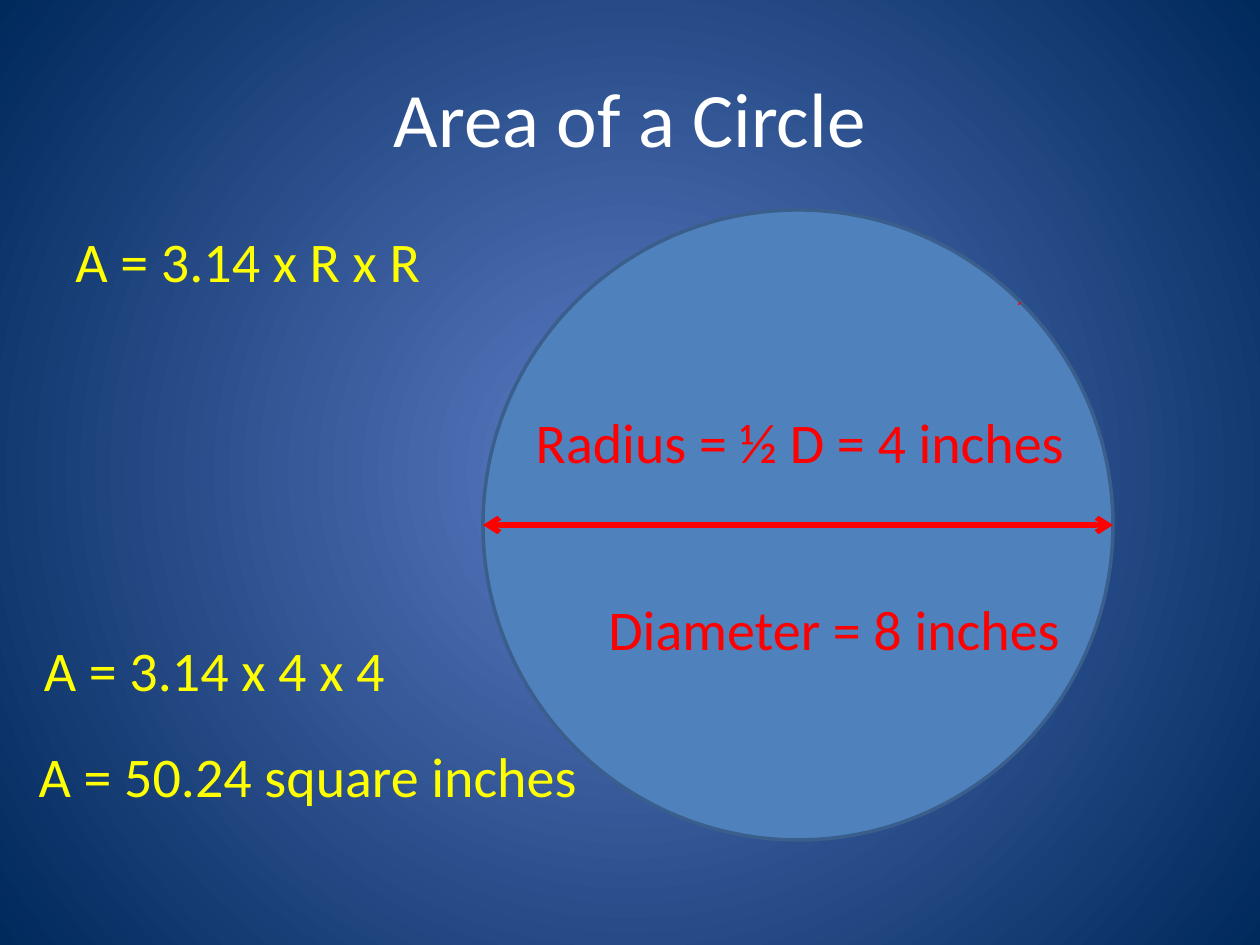
import math

from lxml import etree
from pptx import Presentation
from pptx.dml.color import RGBColor
from pptx.enum import shapes, text
from pptx.oxml import ns
from pptx.util import Pt

WHITE = RGBColor(0xFF, 0xFF, 0xFF)
YELLOW = RGBColor(0xFF, 0xFF, 0x00)
RED = RGBColor(0xFF, 0x00, 0x00)
CIRCLE_FILL = RGBColor(0x4F, 0x81, 0xBD)
CIRCLE_LINE = RGBColor(0x3A, 0x5F, 0x8C)
GLOW = RGBColor(0x5E, 0x7C, 0xC5)
NAVY = RGBColor(0x00, 0x29, 0x5C)


def paint_background(slide):
    """Radial gradient, light in the centre and dark at the corners."""
    fill = slide.background.fill
    fill.gradient()
    for stop, position, color in zip(fill.gradient_stops, (0, 1), (GLOW, NAVY)):
        stop.position = position
        stop.color.rgb = color
    gradient = slide.background._cSld.find(".//" + ns.qn("a:gradFill"))
    gradient.remove(gradient.find(ns.qn("a:lin")))
    shade = etree.SubElement(gradient, ns.qn("a:path"), {"path": "circle"})
    etree.SubElement(shade, ns.qn("a:fillToRect"),
                     dict.fromkeys("ltrb", "50000"))


def add_text(slide, box, wording, color, size=32, wrap=False, align=None,
             anchor=text.MSO_ANCHOR.TOP):
    shape = slide.shapes.add_textbox(*map(Pt, box))
    frame = shape.text_frame
    grow = text.MSO_AUTO_SIZE.NONE if wrap else text.MSO_AUTO_SIZE.SHAPE_TO_FIT_TEXT
    frame_format = {"word_wrap": wrap, "auto_size": grow, "vertical_anchor": anchor}
    for name, value in frame_format.items():
        setattr(frame, name, value)
    paragraph = frame.paragraphs[0]
    paragraph.alignment = align
    run = paragraph.add_run()
    run.text = wording
    for name, value in {"name": "Calibri", "size": Pt(size)}.items():
        setattr(run.font, name, value)
    run.font.color.rgb = color


def add_line(slide, start, end, width, arrow=False):
    line = slide.shapes.add_connector(
        shapes.MSO_CONNECTOR.STRAIGHT, *map(Pt, (*start, *end)))
    line.line.color.rgb = RED
    line.line.width = Pt(width)
    properties = line._element.spPr
    if arrow:
        etree.SubElement(properties.find(ns.qn("a:ln")), ns.qn("a:tailEnd"),
                         {"type": "arrow"})
    etree.SubElement(properties, ns.qn("a:effectLst"))


def add_title(slide, box):
    add_text(slide, box, "Area of a Circle", WHITE, size=44, wrap=True,
             align=text.PP_ALIGN.CENTER, anchor=text.MSO_ANCHOR.MIDDLE)


def add_formula(slide, box):
    add_text(slide, box, "A = 3.14 x R x R", YELLOW, wrap=True)


def add_circle_diagram(slide, left, top, diameter):
    radius = diameter / 2
    center_x, center_y = left + radius, top + radius

    circle = slide.shapes.add_shape(
        shapes.MSO_SHAPE.OVAL, *map(Pt, (left, top, diameter, diameter)))
    circle.shadow.inherit = False
    circle.fill.solid()
    circle.fill.fore_color.rgb = CIRCLE_FILL
    circle.line.color.rgb = CIRCLE_LINE
    circle.line.width = Pt(2)

    # Short tick on the rim, at 45 degrees
    offset = radius * math.sqrt(0.5)
    rim_x, rim_y = center_x + offset, center_y - offset
    add_line(slide, (rim_x, rim_y), (rim_x - 1.44, rim_y + 1.44), 0.75)

    # Two radii that form the diameter
    for rim in (left + diameter, left):
        add_line(slide, (center_x, center_y), (rim, center_y), 3, arrow=True)

    # Measurements above and below the diameter
    add_text(slide, (left + 23, top + 109.5, 317.5, 46),
             "Radius = ½ D = 4 inches", RED)
    add_text(slide, (left + 64.5, top + 216, 275, 46),
             "Diameter = 8 inches", RED)


def add_solution(slide, left, top):
    add_text(slide, (left + 3, top, 214, 46), "A = 3.14 x 4 x 4", YELLOW)
    add_text(slide, (left, top + 60.5, 325.5, 46), "A = 50.24 square inches", YELLOW)


def main():
    presentation = Presentation()
    presentation.slide_width, presentation.slide_height = Pt(720), Pt(540)
    slide = presentation.slides.add_slide(presentation.slide_layouts[6])
    paint_background(slide)
    add_title(slide, (36, 21.6, 648, 90))
    add_formula(slide, (36, 126, 648, 356.4))
    add_circle_diagram(slide, 276, 120, 360)
    add_solution(slide, 15, 359.5)
    presentation.save("out.pptx")


if __name__ == "__main__":
    main()
